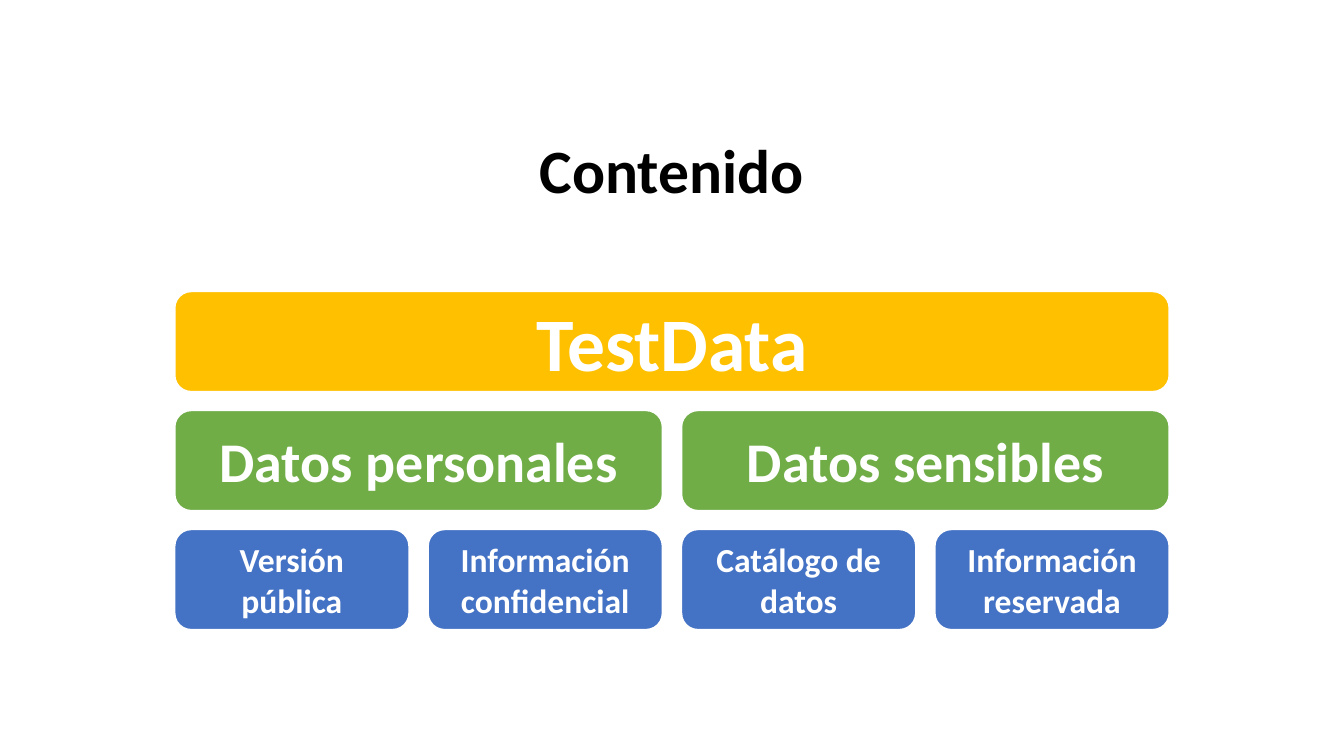
from pptx import Presentation
from pptx.dml.color import RGBColor
from pptx.enum.shapes import MSO_SHAPE
from pptx.enum.text import MSO_ANCHOR, PP_ALIGN
from pptx.util import Pt

COLORS = {"black": "000000", "white": "FFFFFF", "gold": "FFC000",
          "green": "70AD47", "blue": "4472C4"}
LEFT, TOP, WIDTH, HEIGHT = 124.6, 208, 710.8, 72
GAP, ROW_STEP = 13.2, 85


def rgb(name):
    return RGBColor.from_string(COLORS[name])


def write(sp, text, size, color):
    tf = sp.text_frame
    tf.word_wrap = True
    tf.vertical_anchor = MSO_ANCHOR.MIDDLE
    p = tf.paragraphs[0]
    p.text = text
    p.alignment = PP_ALIGN.CENTER
    font = p.runs[0].font
    font.name, font.size, font.bold = "Calibri", Pt(size), True
    font.color.rgb = rgb(color)
    return p


prs = Presentation()
prs.slide_width, prs.slide_height = Pt(960), Pt(540)
s = prs.slides.add_slide(prs.slide_layouts[6])

# Title
title = s.shapes.add_textbox(Pt(66), Pt(90), Pt(828), Pt(68.4))
write(title, "Contenido", 44, "black").line_spacing = 0.9

# Rows of blocks, each row sharing the full width equally
rows = [
    ("gold", 54, ["TestData"]),
    ("green", 40, ["Datos personales", "Datos sensibles"]),
    ("blue", 24, ["Versión pública", "Información confidencial",
                  "Catálogo de datos", "Información reservada"]),
]
for i, (color, size, labels) in enumerate(rows):
    width = (WIDTH - GAP * (len(labels) - 1)) / len(labels)
    for j, label in enumerate(labels):
        sp = s.shapes.add_shape(
            MSO_SHAPE.ROUNDED_RECTANGLE, Pt(LEFT + j * (width + GAP)),
            Pt(TOP + i * ROW_STEP), Pt(width), Pt(HEIGHT))
        sp.shadow.inherit = False
        sp.fill.solid()
        sp.fill.fore_color.rgb = rgb(color)
        sp.line.color.rgb = rgb("white")
        sp.line.width = Pt(1.5)
        write(sp, label, size, "white")

prs.save("out.pptx")
